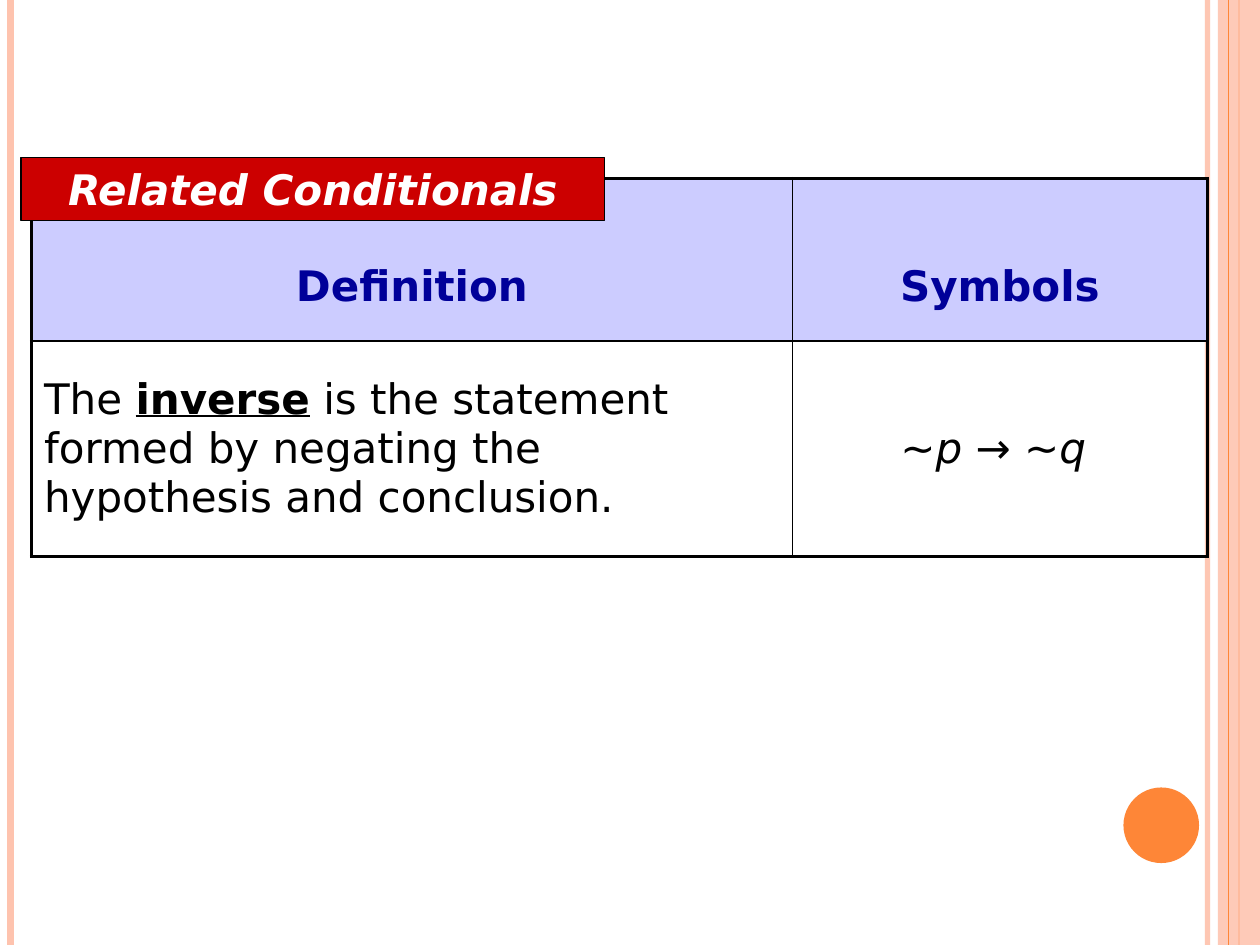
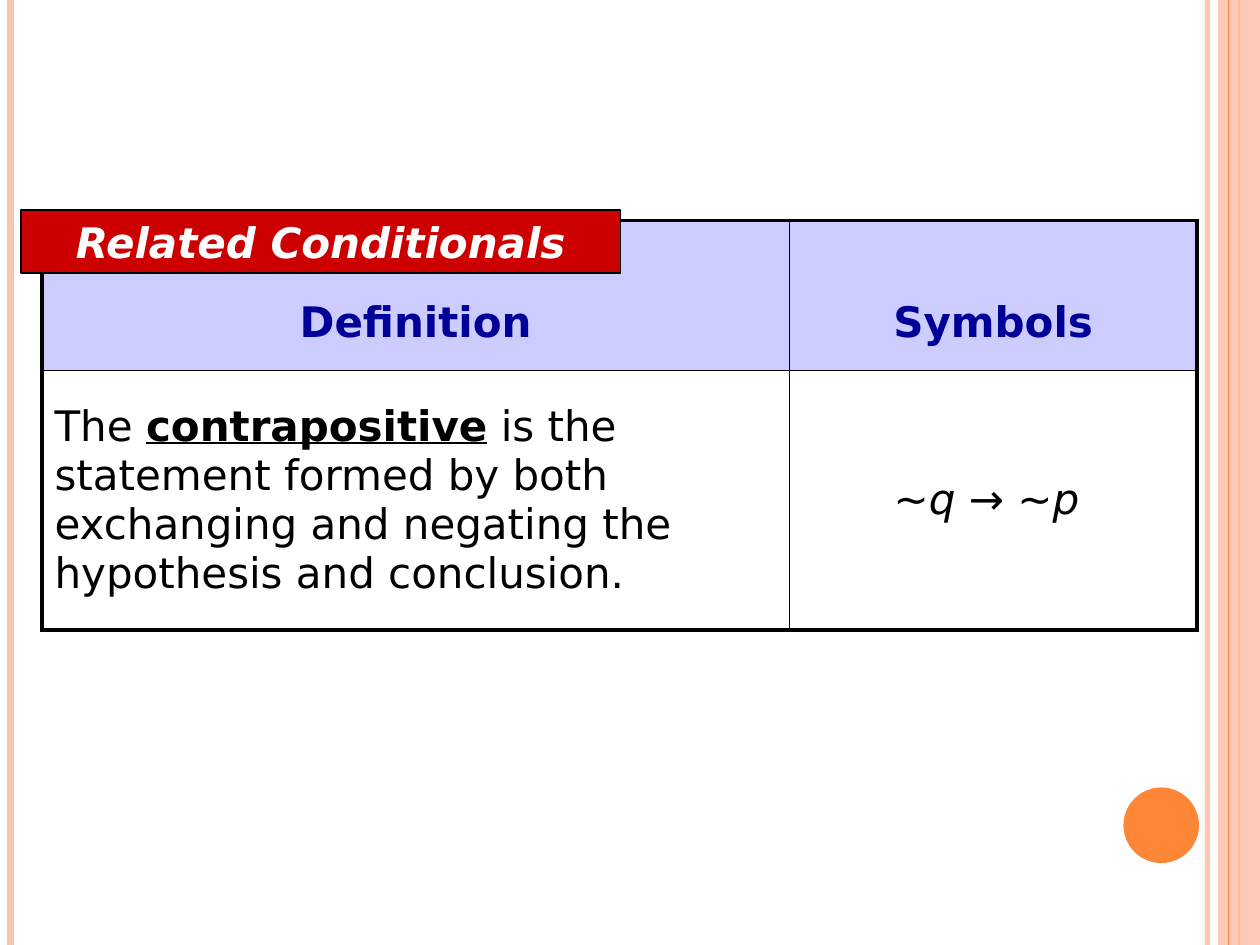
from lxml import etree
from pptx import Presentation
from pptx.dml.color import RGBColor
from pptx.enum.shapes import MSO_CONNECTOR, MSO_SHAPE
from pptx.enum.text import MSO_ANCHOR, MSO_AUTO_SIZE, PP_ALIGN
from pptx.oxml.ns import qn
from pptx.util import Inches, Pt

COLS, ROWS = 120, 90                     # grid of twelfths of an inch
PEACH, ORANGE, RED = "FEC3AE", "FE8637", "CC0000"
LAVENDER, NAVY, BLACK, WHITE = "CCCCFF", "000099", "000000", "FFFFFF"
FONT, SIZE = "DejaVu Sans", 24
THICK, THIN = 2.25, 1
DEFINITION_SHARE = 0.647                 # first column's part of the table width
HEADER_DROP = Inches(0.48)               # pushes header text below the title band


def rgb(hex_color):
    return RGBColor.from_string(hex_color)


def set_alpha(element, percent):
    """Make the solid colour inside an element partly transparent."""
    clr = next(element.iter(qn("a:srgbClr")))
    etree.SubElement(clr, qn("a:alpha"), val=str(percent * 1000))


def set_borders(cell, widths):
    """Draw black cell borders; widths are left, right, top, bottom in points."""
    tcPr = cell._tc.get_or_add_tcPr()
    for side, width in zip("LRTB", widths):
        ln = etree.SubElement(tcPr, qn(f"a:ln{side}"), w=str(Pt(width)))
        fill = etree.SubElement(ln, qn("a:solidFill"))
        etree.SubElement(fill, qn("a:srgbClr"), val=BLACK)


class Deck:
    def __init__(self):
        self.prs = Presentation()
        self.prs.slide_width, self.prs.slide_height = Inches(10), Inches(7.5)
        self.s = None

    def x(self, cols):
        return round(self.prs.slide_width * cols / COLS)

    def y(self, rows):
        return round(self.prs.slide_height * rows / ROWS)

    def box(self, left, top, width, height):
        return self.x(left), self.y(top), self.x(width), self.y(height)

    def new_slide(self):
        self.s = self.prs.slides.add_slide(self.prs.slide_layouts[5])
        self.rule(115, PEACH, 3, alpha=93)
        self.rule(1, PEACH, 4.5)
        self.rule(118, ORANGE, 1.5)
        self.shape(MSO_SHAPE.RECTANGLE, (116, 0, 4, ROWS), PEACH, alpha=87)
        self.rule(117, ORANGE, 0.75)
        self.shape(MSO_SHAPE.OVAL, (107, 75, 7.2, 7.2), ORANGE)

    def rule(self, col, color, width, alpha=100):
        """Add a full-height vertical line."""
        line = self.s.shapes.add_connector(
            MSO_CONNECTOR.STRAIGHT, self.x(col), 0, self.x(col), self.y(ROWS))
        line.line.color.rgb, line.line.width = rgb(color), Pt(width)
        spPr = line.element.spPr
        if alpha < 100:
            set_alpha(spPr, alpha)
        etree.SubElement(spPr, qn("a:effectLst"))

    def shape(self, kind, box, color, alpha=100):
        sp = self.s.shapes.add_shape(kind, *self.box(*box))
        sp.shadow.inherit = False
        sp.fill.solid()
        sp.fill.fore_color.rgb = rgb(color)
        sp.line.fill.background()
        if alpha < 100:
            set_alpha(sp.element.spPr, alpha)

    def text(self, tf, runs, color=BLACK, align=PP_ALIGN.CENTER):
        """Fill one paragraph; each run is (text, style letters from b, i, u)."""
        p = tf.paragraphs[0]
        p.alignment = align
        for words, style in runs:
            r = p.add_run()
            r.text = words
            f = r.font
            f.name, f.size, f.color.rgb = FONT, Pt(SIZE), rgb(color)
            f.bold, f.italic, f.underline = (key in style for key in "biu")

    def title(self, words, box):
        """Format the title as a red band in front of everything else."""
        sp = self.s.shapes.title
        sp.left, sp.top, sp.width, sp.height = self.box(*box)
        sp.fill.solid()
        sp.fill.fore_color.rgb = rgb(RED)
        sp.line.color.rgb, sp.line.width = rgb(BLACK), Pt(0.75)
        tf = sp.text_frame
        tf.word_wrap, tf.auto_size = True, MSO_AUTO_SIZE.NONE
        tf.vertical_anchor = MSO_ANCHOR.MIDDLE
        self.text(tf, [(words, "bi")], WHITE)
        sp.element.getparent().append(sp.element)

    def table(self, box, header_rows, definition, symbols):
        left, top, width, height = self.box(*box)
        tbl = self.s.shapes.add_table(2, 2, left, top, width, height).table
        tbl.first_row = tbl.horz_banding = False
        tbl.columns[0].width = round(width * DEFINITION_SHARE)
        tbl.columns[1].width = width - tbl.columns[0].width
        tbl.rows[0].height = self.y(header_rows)
        tbl.rows[1].height = height - tbl.rows[0].height
        content = [[[("Definition", "b")], [("Symbols", "b")]],
                   [definition, symbols]]
        for i, row in enumerate(content):
            for j, runs in enumerate(row):
                cell, header = tbl.cell(i, j), i == 0
                set_borders(cell, [THICK if outer else THIN
                                   for outer in (j == 0, j == 1, i == 0, i == 1)])
                cell.vertical_anchor = MSO_ANCHOR.MIDDLE
                if header:
                    cell.fill.solid()
                    cell.fill.fore_color.rgb = rgb(LAVENDER)
                    cell.margin_top = HEADER_DROP
                else:
                    cell.fill.background()
                centred = header or j == 1
                self.text(cell.text_frame, runs, NAVY if header else BLACK,
                          PP_ALIGN.CENTER if centred else PP_ALIGN.LEFT)

    def conditional(self, term, meaning, first, second, table_box, header_rows, band):
        """Add a slide that defines one related conditional."""
        self.new_slide()
        self.table(table_box, header_rows,
                   [("The ", ""), (term, "bu"), (f" is the statement {meaning}", "")],
                   [(f"~{first} ", "i"), ("→ ~", ""), (f"{second} ", "i")])
        self.title("Related Conditionals", band)


def main():
    deck = Deck()
    deck.conditional("inverse", "formed by negating the hypothesis and conclusion.",
                     "p", "q", (3, 17, 112, 36), 15.5, (2, 15, 55.6, 6))
    deck.conditional("contrapositive",
                     "formed by both exchanging and negating the hypothesis and conclusion.",
                     "q", "p", (4, 21, 110, 39), 14.3, (2, 20, 57.1, 6))
    deck.prs.save("out.pptx")


if __name__ == "__main__":
    main()
